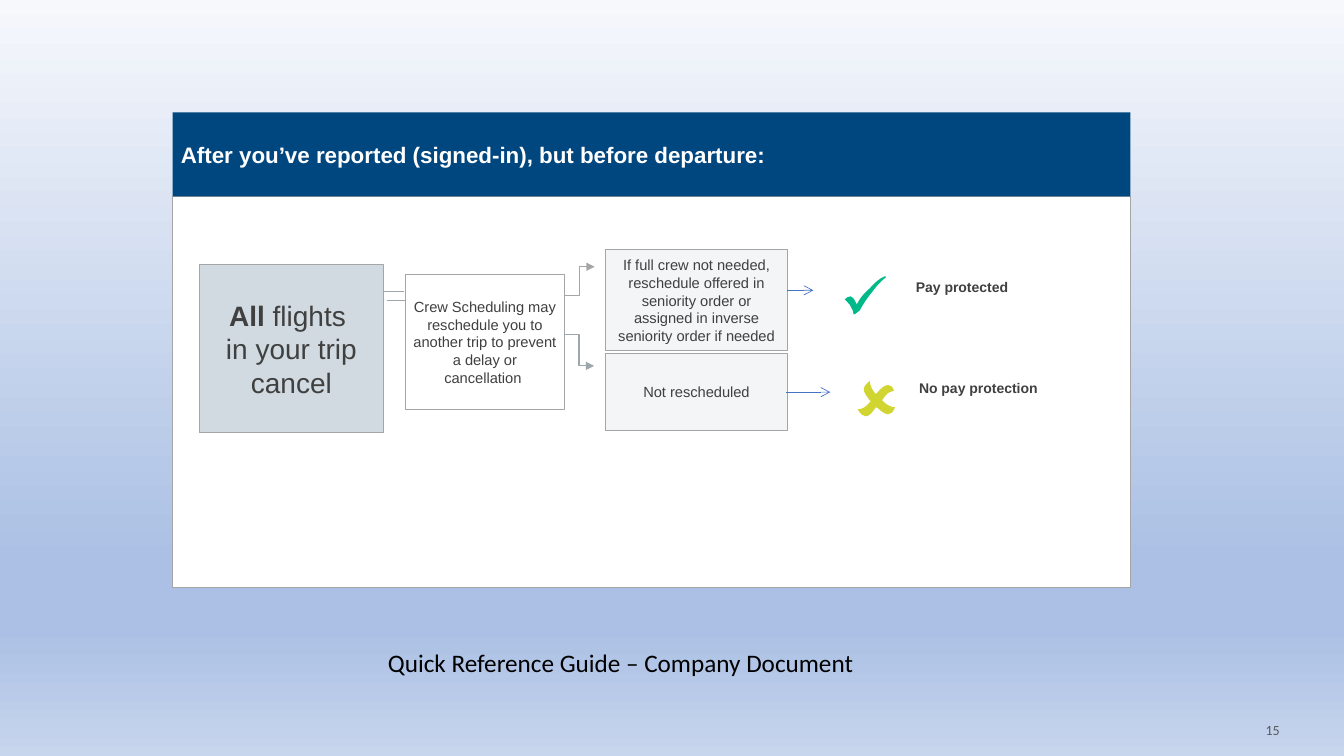
import copy
import pptx
import pptx.util
import pptx.dml.color
import pptx.enum.dml
import pptx.enum.shapes
import pptx.enum.text
import pptx.oxml
import pptx.oxml.ns

Pt = pptx.util.Pt
qn = pptx.oxml.ns.qn
Align = pptx.enum.text.PP_ALIGN
Anchor = pptx.enum.text.MSO_ANCHOR
Link = pptx.enum.shapes.MSO_CONNECTOR
LEFT, MID, RIGHT = Align.LEFT, Align.CENTER, Align.RIGHT
GREY, SLATE, BLUE, INK = "A5A5A5", "9DA6AB", "4472C4", "404040"


def hue(code):
    return pptx.dml.color.RGBColor.from_string(code)


def write(frame, paras, size, color, font, align, inset, anchor, wrap):
    """Each paragraph is a list of (text, bold) runs."""
    frame.word_wrap = wrap
    frame.vertical_anchor = anchor
    frame.margin_left = frame.margin_right = Pt(inset[0])
    frame.margin_top = frame.margin_bottom = Pt(inset[1])
    for i, runs in enumerate(paras):
        para = frame.paragraphs[0] if i == 0 else frame.add_paragraph()
        para.alignment = align
        for text, bold in runs:
            run = para.add_run()
            run.text = text
            run.font.size = Pt(size)
            run.font.name = font
            run.font.bold = bold
            run.font.color.rgb = hue(color)


deck = pptx.Presentation()
deck.slide_width, deck.slide_height = Pt(960), Pt(540)
slide = deck.slides.add_slide(deck.slide_layouts[6])
shapes = slide.shapes

# Background gradient
fill = slide.background.fill
fill.gradient()
fill.gradient_angle = 270
stops = fill._fill._gradFill.find(qn("a:gsLst"))
for stop in list(stops):
    stops.append(copy.deepcopy(stop))
shades = [(0, "F6F8FC"), (0.74, "ABC0E4"), (0.83, "ABC0E4"), (1, "C7D5ED")]
for stop, (place, shade) in zip(fill.gradient_stops, shades):
    stop.position = place
    stop.color.rgb = hue(shade)

# Panel, title bar, outcome labels and flow boxes:
# left, top, width, height, fill, opacity, line, line width, size, ink, align, text
boxes = [
    (123.4, 140.4, 684, 279.2, "FFFFFF", 100, GREY, 0.75, 10, INK, LEFT, []),
    (648.4, 194.4, 79.2, 21.6, "FFFFFF", 100, "FFFFFF", 1.5, 10, INK, LEFT,
     [[("Pay protected", True)]]),
    (123.4, 80.3, 684, 60, "00467F", 100, None, 0, 16, "FFFFFF", LEFT,
     [[("After you’ve reported (signed-in), but before departure:", True)]]),
    (648.4, 266.4, 100.8, 21.6, "FFFFFF", 100, "FFFFFF", 1.5, 10, INK, MID,
     [[("No pay protection", True)]]),
    (142.4, 188.8, 131.5, 120.2, "D0DAE0", 100, GREY, 0.75, 20, INK, MID,
     [[("All", True), (" flights ", False)], [("in your trip cancel", False)]]),
    (289.5, 196.1, 113.8, 96.4, "FFFFFF", 100, GREY, 0.75, 10.5, INK, MID,
     [[("Crew Scheduling may reschedule you to another trip to prevent "
        "a delay or cancellation ", False)]]),
    (432.6, 252.5, 130, 54.9, "D0DAE0", 25, GREY, 0.75, 10.5, INK, MID,
     [[("Not rescheduled", False)]]),
    (432.6, 178.5, 130, 72, "D0DAE0", 25, GREY, 0.75, 10.5, INK, MID,
     [[("If full crew not needed, reschedule offered in seniority order or "
        "assigned in inverse seniority order if needed", False)]]),
]
for x, y, w, h, tone, alpha, edge, width, size, ink, align, paras in boxes:
    box = shapes.add_shape(pptx.enum.shapes.MSO_SHAPE.RECTANGLE,
                           Pt(x), Pt(y), Pt(w), Pt(h))
    box.shadow.inherit = False
    box.fill.solid()
    box.fill.fore_color.rgb = hue(tone)
    if alpha < 100:
        clear = pptx.oxml.parse_xml(
            '<a:alpha xmlns:a="http://schemas.openxmlformats.org/drawingml/2006/main"'
            f' val="{alpha * 1000}"/>')
        box._element.spPr.find(qn("a:solidFill"))[0].append(clear)
    if edge:
        box.line.color.rgb = hue(edge)
        box.line.width = Pt(width)
    else:
        box.line.fill.background()
    write(box.text_frame, paras, size, ink, "Arial", align,
          (5.8, 5.8), Anchor.MIDDLE, True)

# Connectors: kind, start, end, color, width, arrowhead
links = [
    (Link.STRAIGHT, 274.3, 208.1, 288.7, 208.1, SLATE, 0.5, None),
    (Link.STRAIGHT, 276.5, 214.6, 289.4, 214.6, SLATE, 0.5, None),
    (Link.STRAIGHT, 562.5, 207.4, 581, 207.4, BLUE, 0.5, "arrow"),
    (Link.STRAIGHT, 561.6, 280.1, 593.1, 280.1, BLUE, 0.5, "arrow"),
    (Link.ELBOW, 403.2, 211, 424.8, 190.6, GREY, 0.75, "triangle"),
    (Link.ELBOW, 402.8, 239, 424.4, 261.4, SLATE, 0.75, "triangle"),
]
for kind, x1, y1, x2, y2, tone, width, head in links:
    link = shapes.add_connector(kind, Pt(x1), Pt(y1), Pt(x2), Pt(y2))
    link.line.color.rgb = hue(tone)
    link.line.width = Pt(width)
    if head:
        edge = link.line._get_or_add_ln()
        edge.append(edge.makeelement(qn("a:tailEnd"), {"type": head}))
    props = link._element.spPr
    props.append(props.makeelement(qn("a:effectLst"), {}))

# Tick and cross in units of 0.72 pt: a pair is a corner,
# six numbers are a curve's two handles and its end
marks = [
    ("00B989", (878, 274), [
        (879, 275), (875, 278, 870, 283, 865, 290), (860, 296, 856, 302, 853, 308),
        (849, 311, 848, 312, 847, 312), (847, 311, 846, 310, 846, 308), (845, 306),
        (844, 303, 842, 301, 841, 300), (840, 298, 839, 298, 838, 297),
        (840, 295, 842, 294, 844, 294), (845, 294, 847, 296, 849, 300), (850, 302),
        (853, 296, 857, 291, 863, 286), (868, 280, 873, 276, 878, 274)]),
    ("D1D532", (869, 404), [
        (865, 410, 862, 413, 859, 413), (856, 413, 854, 411, 851, 406), (852, 406),
        (855, 406, 859, 404, 863, 399), (864, 398), (862, 396),
        (859, 392, 857, 389, 857, 386), (857, 384, 859, 381, 863, 378),
        (863, 382, 865, 386, 868, 390), (869, 391), (870, 390),
        (874, 385, 878, 382, 881, 382), (884, 382, 886, 384, 887, 388), (886, 388),
        (885, 388, 883, 389, 881, 390), (879, 392, 877, 394, 876, 396), (875, 397),
        (876, 398), (880, 402, 884, 404, 888, 404), (886, 409, 884, 411, 881, 411),
        (879, 411, 875, 409, 871, 405)]),
]
for tone, start, parts in marks:
    ends = [part[-2:] for part in parts]
    path = shapes.build_freeform(*start, scale=Pt(0.72))
    path.add_line_segments(ends)
    mark = path.convert_to_shape()
    mark.shadow.inherit = False
    mark.fill.solid()
    mark.fill.fore_color.rgb = hue(tone)
    mark.line.fill.background()
    # Turn the straight segments that have handles into curves
    left, top = (min(axis) for axis in zip(start, *ends))
    for part, seg in zip(parts, list(mark._element.iter(qn("a:lnTo")))):
        if len(part) == 6:
            curve = seg.makeelement(qn("a:cubicBezTo"), {})
            for x, y in zip(part[::2], part[1::2]):
                spot = {"x": str(x - left), "y": str(y - top)}
                curve.append(seg.makeelement(qn("a:pt"), spot))
            seg.getparent().replace(seg, curve)

# Caption and page number
notes = [
    (270, 458.6, 351.4, 28.8, "Quick Reference Guide – Company Document",
     18, "000000", LEFT, (7.2, 3.6), Anchor.TOP),
    (902.6, 515.5, 11.5, 12.2, "15", 10, "595959", RIGHT, (0, 0), Anchor.BOTTOM),
]
for x, y, w, h, text, size, ink, align, inset, anchor in notes:
    note = shapes.add_textbox(Pt(x), Pt(y), Pt(w), Pt(h))
    write(note.text_frame, [[(text, False)]], size, ink, "Calibri", align,
          inset, anchor, False)

deck.save("out.pptx")
